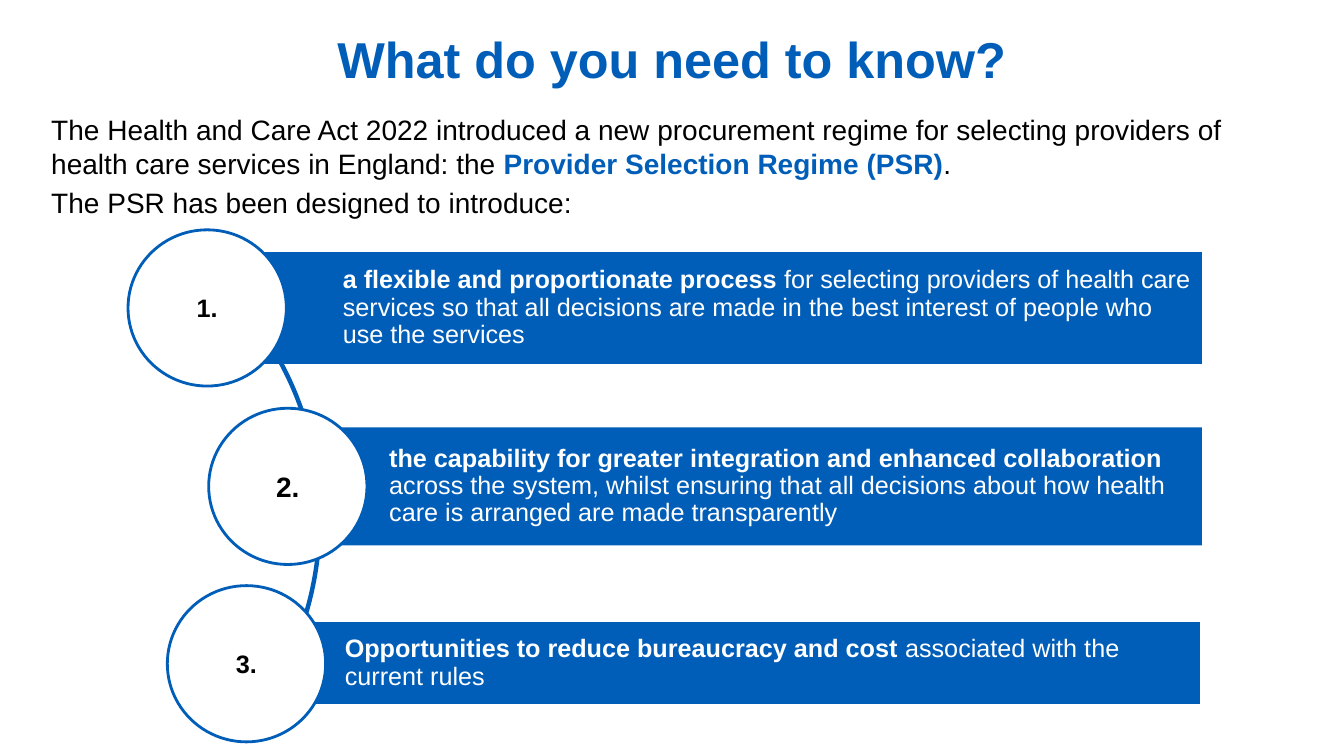
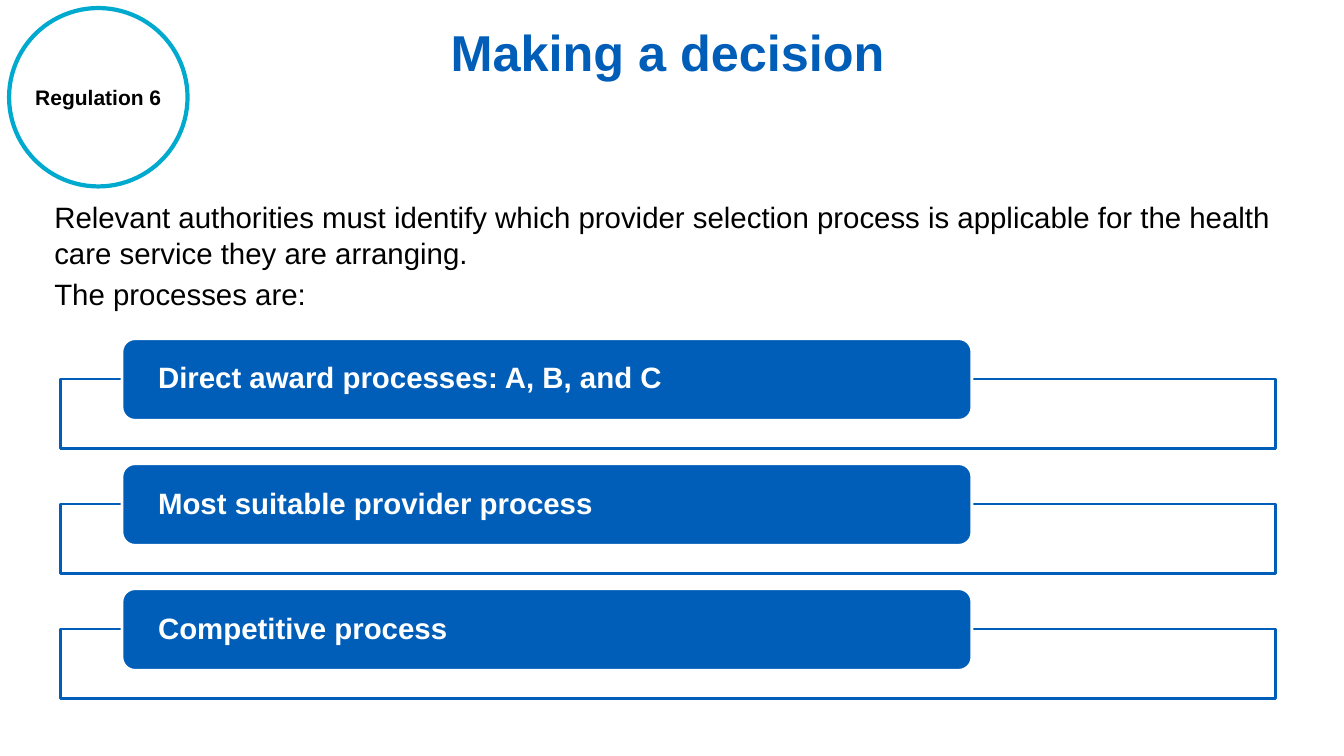
import pptx
import pptx.util
import pptx.dml.color
import pptx.enum.shapes
import pptx.enum.text

PX = 9144
FONT = "Arial"
HUE = {"blue": "005EB8", "teal": "00A9CE", "white": "FFFFFF", "black": "000000"}
KIND = pptx.enum.shapes.MSO_SHAPE
ALIGN = pptx.enum.text.PP_ALIGN
ANCHOR = pptx.enum.text.MSO_ANCHOR


def write(shape, paras, size=18, hue="black", bold=False, align=ALIGN.LEFT,
          anchor=ANCHOR.MIDDLE, pad=(10, 5, 10, 5), wrap=True, space=None, gap=0):
    frame = shape.text_frame
    frame.auto_size = pptx.enum.text.MSO_AUTO_SIZE.NONE
    frame.word_wrap = wrap
    frame.vertical_anchor = anchor
    frame.margin_left, frame.margin_top, frame.margin_right, frame.margin_bottom = [n * PX for n in pad]
    for i, runs in enumerate(paras):
        para = frame.add_paragraph() if i else frame.paragraphs[0]
        para.alignment = align
        para.line_spacing = space
        para.space_before = pptx.util.Pt(gap if i else 0)
        for part in runs:
            words, strong, tint = part if isinstance(part, tuple) else (part, bold, hue)
            run = para.add_run()
            run.text = words
            run.font.name = FONT
            run.font.size = pptx.util.Pt(size)
            run.font.bold = strong
            run.font.color.rgb = pptx.dml.color.RGBColor.from_string(HUE[tint])


def draw(slide, kind, box, fill=None, line=None, width=2):
    shape = slide.shapes.add_shape(kind, *[n * PX for n in box])
    shape.shadow.inherit = False
    if fill:
        shape.fill.solid()
        shape.fill.fore_color.rgb = pptx.dml.color.RGBColor.from_string(HUE[fill])
    else:
        shape.fill.background()
    if line:
        shape.line.color.rgb = pptx.dml.color.RGBColor.from_string(HUE[line])
        shape.line.width = pptx.util.Pt(width)
    else:
        shape.line.fill.background()
    return shape


deck = pptx.Presentation()
deck.slide_width, deck.slide_height = 1333 * PX, 750 * PX

pages = [
    ("What do you need to know?", (324, 8, 685, 99), ALIGN.CENTER, (41, 107, 1245, 136), 20,
     [["The Health and Care Act 2022 introduced a new procurement regime for selecting providers of "
       "health care services in England: the ",
       ("Provider Selection Regime (PSR)", True, "blue"), "."],
      ["The PSR has been designed to introduce:"]]),
    ("Making a decision", (437, 1, 459, 99), ALIGN.LEFT, (44, 193, 1246, 121), 21,
     [["Relevant authorities must identify which provider selection process is applicable for the "
       "health care service they are arranging."],
      ["The processes are:"]]),
]
slides = []
for name, head, align, body, size, paras in pages:
    slide = deck.slides.add_slide(deck.slide_layouts[5])
    title = slide.shapes.title
    title.left, title.top, title.width, title.height = [n * PX for n in head]
    write(title, [[name]], size=36, hue="blue", bold=True, align=align)
    note = slide.shapes.add_textbox(*[n * PX for n in body])
    write(note, paras, size=size, anchor=ANCHOR.TOP, gap=size * 0.2)
    slides.append(slide)
aims, choice = slides

steps = [
    ("3.", 18, (166, 581), (249, 616, 943, 84), "white",
     "Opportunities to reduce bureaucracy and cost ", "associated with the current rules"),
    ("1.", 18, (127, 228), (247, 250, 945, 111), None,
     "a flexible and proportionate process ",
     "for selecting providers of health care services so that all decisions are made "
     "in the best interest of people who use the services"),
    ("2.", 20, (207, 405), (293, 424, 899, 117), None,
     "the capability for greater integration and enhanced collaboration",
     " across the system, whilst ensuring that all decisions about how health care "
     "is arranged are made transparently"),
]
for mark, size, spot, box, edge, lead, rest in steps:
    bar = draw(aims, KIND.RECTANGLE, box, "blue", edge)
    write(bar, [[(lead, True, "white"), rest]], hue="white", pad=(93, 5, 5, 5), space=0.9)
    if mark == "3.":
        arc = draw(aims, KIND.BLOCK_ARC, (-219, 215, 537, 599), line="blue")
        for i, turn in enumerate((189, 27, 0.003)):
            arc.adjustments[i] = turn
    disc = draw(aims, KIND.OVAL, (*spot, 157, 155), "white", "blue")
    write(disc, [[mark]], size=size, bold=True, align=ALIGN.CENTER, wrap=False)

badge = draw(choice, KIND.OVAL, (9, 8, 177, 177), "white", "teal", 3)
write(badge, [["Regulation 6"]], size=15, bold=True, align=ALIGN.CENTER, wrap=False)

routes = ["Direct award processes: A, B, and C", "Most suitable provider process", "Competitive process"]
for i, route in enumerate(routes):
    top = 336 + 124 * i
    draw(choice, KIND.RECTANGLE, (60, top + 40, 1205, 69), "white", "blue")
    tab = draw(choice, KIND.ROUNDED_RECTANGLE, (121, top, 843, 81), "blue", "white")
    tab.adjustments[0] = 0.16
    write(tab, [[route]], size=21, hue="white", bold=True, pad=(32, 0, 32, 0), space=0.9)

deck.save("out.pptx")
